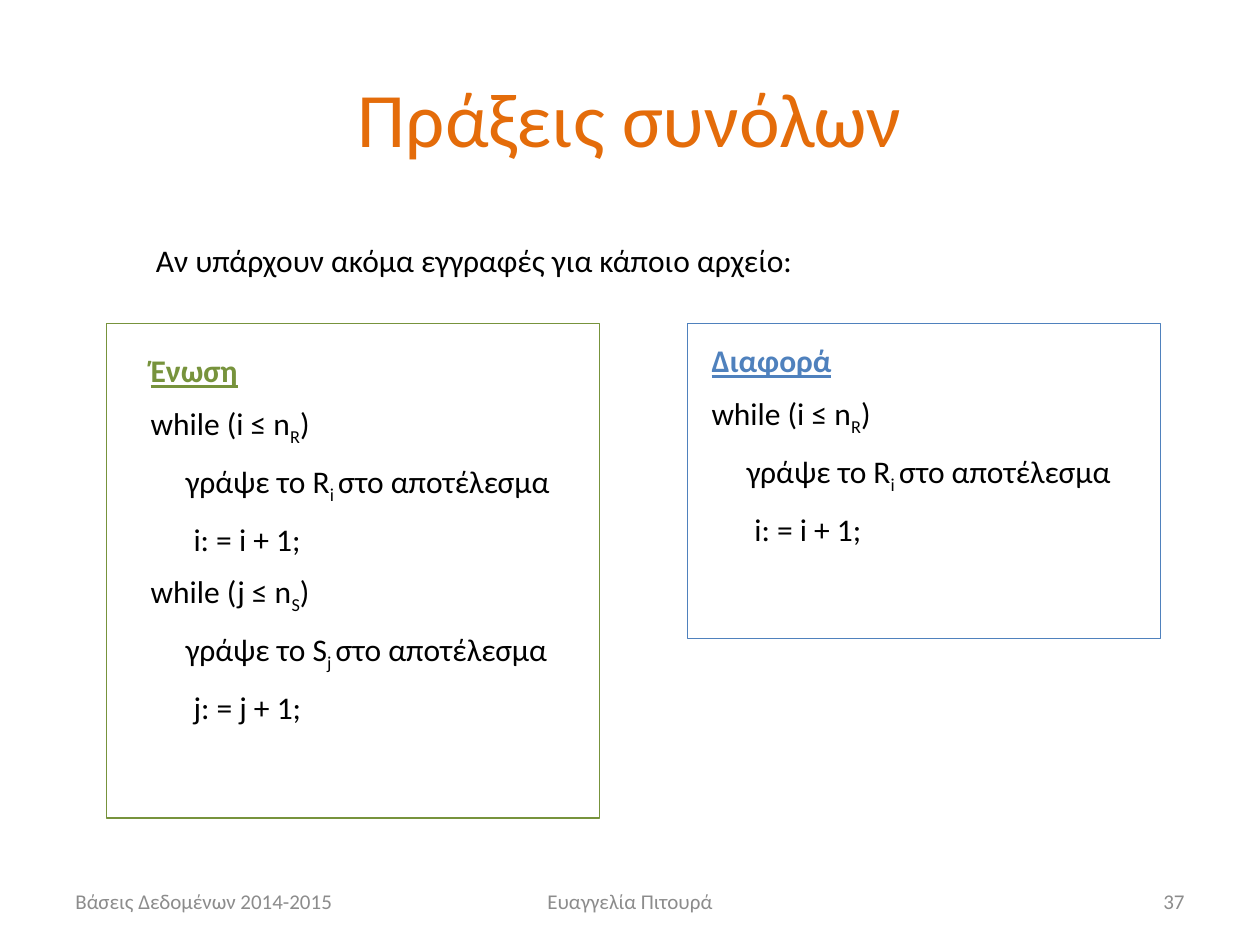
import pptx
import pptx.util
import pptx.dml.color
import pptx.enum.shapes
import pptx.enum.text

Pt = pptx.util.Pt
Align = pptx.enum.text.PP_ALIGN
Anchor = pptx.enum.text.MSO_ANCHOR
COLORS = {"title": "E46C0A", "union": "77933C", "minus": "4F81BD",
          "text": "000000", "foot": "8C8C8C"}
STEP, DEEP = 20, 24.5


def color(key):
    return pptx.dml.color.RGBColor.from_string(COLORS[key])


def add_run(para, text, size, key, bold=False, sub=False):
    run = para.add_run()
    run.text = text
    font = run.font
    font.name, font.size, font.bold = "Calibri", Pt(size), bold
    font.underline = bold
    font.color.rgb = color(key)
    if sub:
        run._r.get_or_add_rPr().set("baseline", "-25000")


def add_box(shapes, box):
    frame = shapes.add_textbox(*map(Pt, box)).text_frame
    frame.word_wrap = True
    return frame


def add_title(slide, box, text):
    title = slide.shapes.title
    title.left, title.top, title.width, title.height = map(Pt, box)
    frame = title.text_frame
    frame.vertical_anchor = Anchor.MIDDLE
    para = frame.paragraphs[0]
    para.alignment = Align.CENTER
    add_run(para, text, 44, "title")


def add_lead(slide, box, text):
    add_run(add_box(slide.shapes, box).paragraphs[0], text, 18, "text")


def loop(index, file, row):
    return [
        (0, [f"while ({index} ≤ n", file, ")"]),
        (STEP, [f"γράψε το {row}", f"{index} ", "στο αποτέλεσμα"]),
        (DEEP, [f"{index}: = {index} + 1;"]),
    ]


def add_panel(slide, box, inset, width, key, head, lines):
    left, top, wide, high = box
    shapes = slide.shapes.add_group_shape().shapes
    dx, dy = inset
    frame = add_box(shapes, (left + dx, top + dy, width, high - dy))
    add_run(frame.paragraphs[0], head, 18, key, bold=True)
    for indent, parts in lines:
        para = frame.add_paragraph()
        para.space_before = Pt(8.5)
        para._p.get_or_add_pPr().set("marL", str(Pt(indent)))
        for pos, part in enumerate(parts):
            add_run(para, part, 18, "text", sub=pos == 1)
    rect = shapes.add_shape(pptx.enum.shapes.MSO_SHAPE.RECTANGLE, *map(Pt, box))
    rect.shadow.inherit = False
    rect.fill.background()
    rect.line.color.rgb = color(key)
    rect.line.width = Pt(0.75)


def add_foot(slide, box, parts):
    left, top, wide, high = box
    spans = [(0, 168, Align.LEFT), (210, 228, Align.CENTER),
             (wide - 168, 168, Align.RIGHT)]
    for text, (shift, width, align) in zip(parts, spans):
        frame = add_box(slide.shapes, (left + shift, top, width, high))
        frame.vertical_anchor = Anchor.MIDDLE
        para = frame.paragraphs[0]
        para.alignment = align
        add_run(para, text, 12, "foot")


def main():
    deck = pptx.Presentation()
    deck.slide_width, deck.slide_height = Pt(720), Pt(540)
    slide = deck.slides.add_slide(deck.slide_layouts[5])
    add_title(slide, (36, 21.6, 648, 90), "Πράξεις συνόλων")
    add_lead(slide, (82, 134, 492, 32),
             "Αν υπάρχουν ακόμα εγγραφές για κάποιο αρχείο:")
    first = loop("i", "R", "R")
    add_panel(slide, (61, 185, 281.5, 282.5), (18, 12.3), 270, "union", "Ένωση",
              first + loop("j", "S", "S"))
    add_panel(slide, (393, 185, 270, 180), (6.5, 6.5), 270, "minus", "Διαφορά",
              first)
    add_foot(slide, (36, 500.5, 648, 28.8),
             ["Βάσεις Δεδομένων 2014-2015", "Ευαγγελία Πιτουρά", "37"])
    deck.save("out.pptx")


if __name__ == "__main__":
    main()
